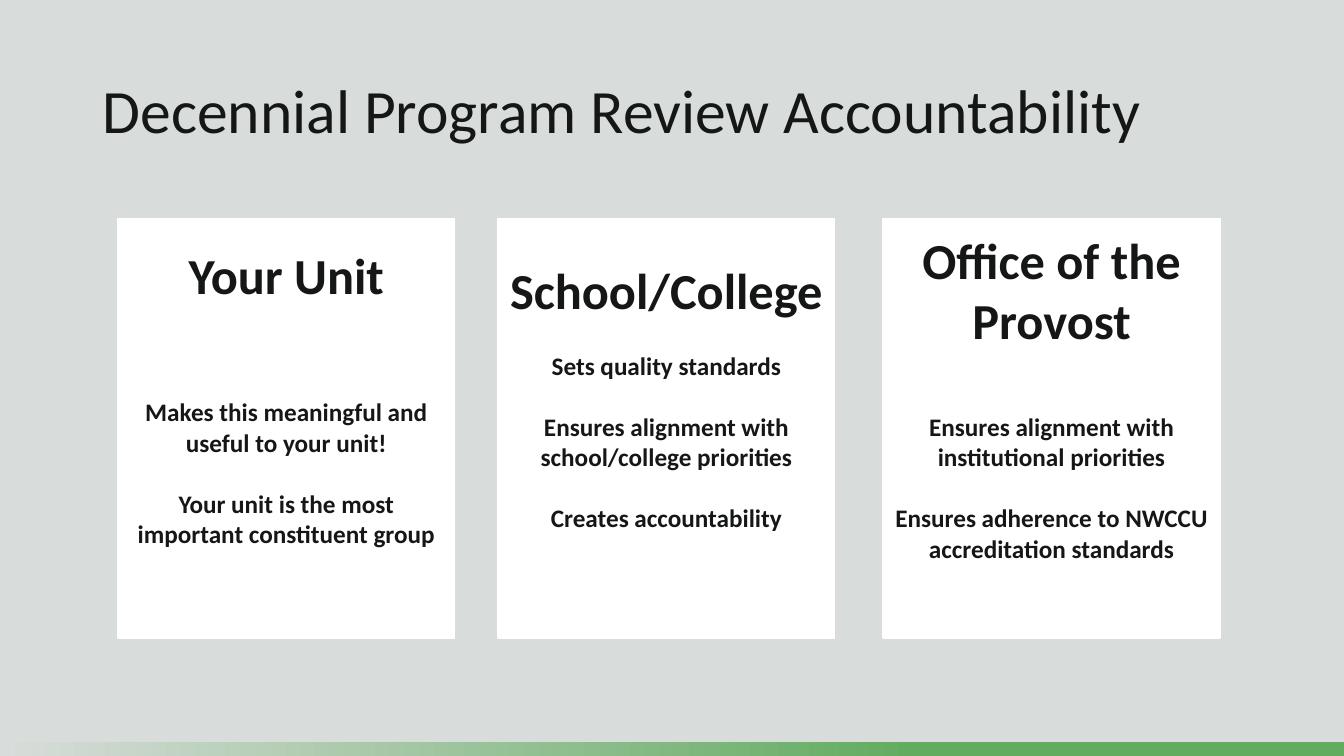
"""Build the slide on who is accountable for the decennial program review."""
from dataclasses import dataclass

from pptx import Presentation
from pptx.dml.color import RGBColor
from pptx.enum.shapes import MSO_SHAPE
from pptx.enum.text import MSO_ANCHOR, PP_ALIGN
from pptx.shapes.autoshape import Shape
from pptx.slide import Slide
from pptx.text.text import TextFrame
from pptx.util import Inches, Pt

BACKGROUND = RGBColor(0xD8, 0xDC, 0xDA)
INK = RGBColor(0x15, 0x17, 0x16)
WHITE = RGBColor(0xFF, 0xFF, 0xFF)
GREEN = RGBColor(0x62, 0xAC, 0x60)
FONT = "Calibri"
SLIDE_WIDTH, SLIDE_HEIGHT = 13.33, 7.5
CARD_TOP, CARD_WIDTH, CARD_HEIGHT = 2.17, 3.34, 4.16
BAR_HEIGHT = 0.14
BODY_LINE = 22


@dataclass(frozen=True)
class Card:
    """One accountable party, with its text offset and heading gap."""
    left: float
    text_offset: float
    heading_gap: int
    heading: str
    duties: tuple[str, ...]


CARDS = (
    Card(1.17, 0.25, 3 * BODY_LINE, "Your Unit",
         ("Makes this meaningful and useful to your unit!",
          "Your unit is the most important constituent group")),
    Card(4.94, 0.4, BODY_LINE, "School/College",
         ("Sets quality standards",
          "Ensures alignment with school/college priorities",
          "Creates accountability")),
    Card(8.76, 0.1, 2 * BODY_LINE, "Office of the Provost",
         ("Ensures alignment with institutional priorities",
          "Ensures adherence to NWCCU accreditation standards")),
)


def write_paragraph(frame: TextFrame, text: str, *, size: int, bold: bool = False,
                    align: PP_ALIGN = PP_ALIGN.LEFT, before: int = 0,
                    line_spacing: float = 1.0) -> None:
    """Write text into the empty first paragraph or into a new one."""
    paragraph = frame.paragraphs[0] if not frame.text else frame.add_paragraph()
    paragraph.alignment = align
    paragraph.line_spacing = line_spacing
    if before:
        paragraph.space_before = Pt(before)
    run = paragraph.add_run()
    run.text = text
    run.font.name = FONT
    run.font.size = Pt(size)
    run.font.bold = bold
    run.font.color.rgb = INK


def add_rectangle(slide: Slide, left: float, top: float, width: float, height: float) -> Shape:
    """Add a rectangle without a shadow."""
    shape = slide.shapes.add_shape(MSO_SHAPE.RECTANGLE, Inches(left), Inches(top),
                                   Inches(width), Inches(height))
    shape.shadow.inherit = False
    return shape


def add_footer_bar(slide: Slide) -> None:
    """Add the bar that fades from the background to green."""
    bar = add_rectangle(slide, 0, SLIDE_HEIGHT - BAR_HEIGHT, SLIDE_WIDTH, BAR_HEIGHT)
    bar.line.fill.background()
    bar.fill.gradient()
    bar.fill.gradient_angle = 0
    for stop, color, position in zip(bar.fill.gradient_stops, (BACKGROUND, GREEN), (0, 0.68)):
        stop.color.rgb = color
        stop.position = position


def add_title(slide: Slide) -> None:
    """Add the slide title."""
    box = slide.shapes.add_textbox(Inches(0.92), Inches(0.4), Inches(11.5), Inches(1.45))
    frame = box.text_frame
    frame.word_wrap = True
    frame.vertical_anchor = MSO_ANCHOR.MIDDLE
    write_paragraph(frame, "Decennial Program Review Accountability", size=44, line_spacing=0.9)


def add_card(slide: Slide, card: Card) -> None:
    """Add a white card with a heading and its duties."""
    shape = add_rectangle(slide, card.left, CARD_TOP, CARD_WIDTH, CARD_HEIGHT)
    shape.fill.solid()
    shape.fill.fore_color.rgb = WHITE
    shape.line.color.rgb = WHITE
    shape.line.width = Pt(1)
    frame = shape.text_frame
    frame.word_wrap = True
    frame.vertical_anchor = MSO_ANCHOR.TOP
    frame.margin_top = Inches(card.text_offset)
    write_paragraph(frame, card.heading, size=36, bold=True, align=PP_ALIGN.CENTER)
    for index, duty in enumerate(card.duties):
        write_paragraph(frame, duty, size=18, bold=True, align=PP_ALIGN.CENTER,
                        before=BODY_LINE if index else card.heading_gap)


def main() -> None:
    """Create and save the presentation."""
    presentation = Presentation()
    presentation.slide_width = Inches(SLIDE_WIDTH)
    presentation.slide_height = Inches(SLIDE_HEIGHT)
    slide = presentation.slides.add_slide(presentation.slide_layouts[6])
    slide.background.fill.solid()
    slide.background.fill.fore_color.rgb = BACKGROUND
    add_footer_bar(slide)
    add_title(slide)
    for card in CARDS:
        add_card(slide, card)
    presentation.save("out.pptx")


if __name__ == "__main__":
    main()
